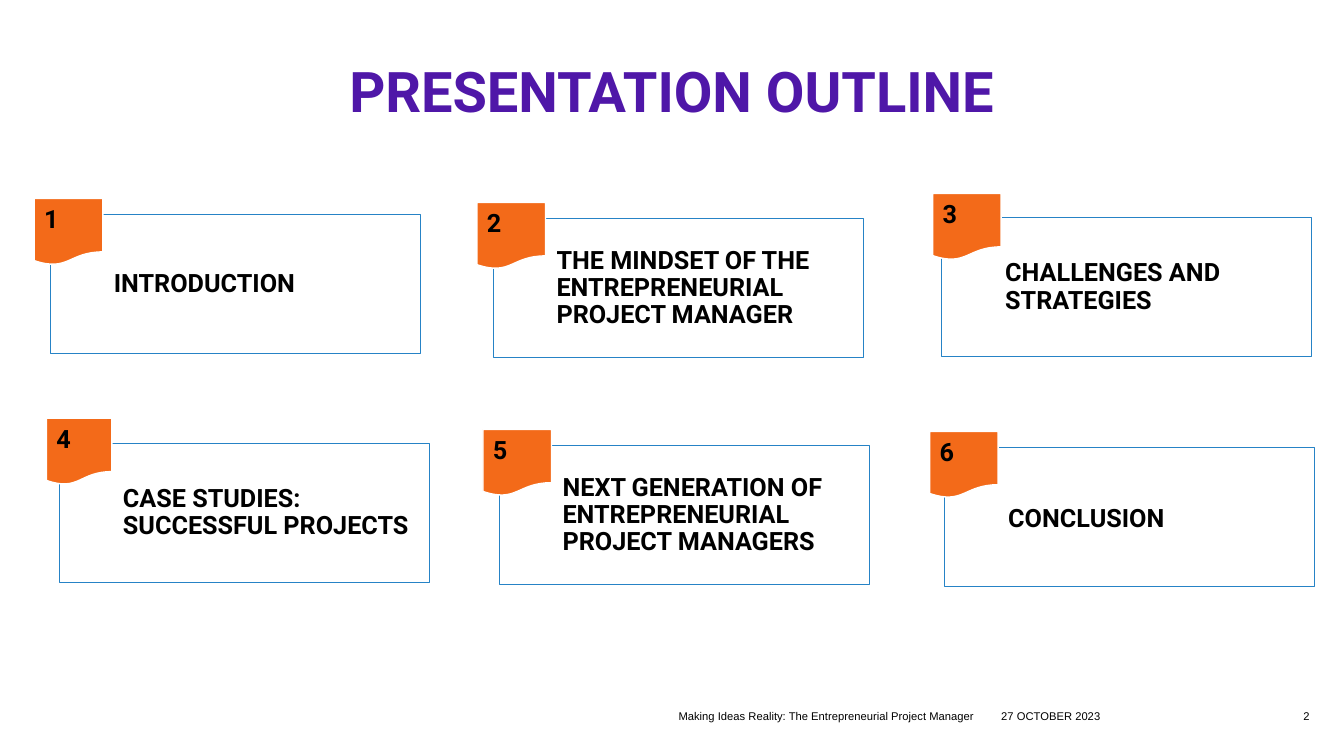
from dataclasses import dataclass
from typing import Any

import pptx
import pptx.dml.color
import pptx.enum.shapes
import pptx.enum.text
import pptx.oxml
import pptx.oxml.ns
import pptx.util
from pptx.util import Inches

ALIGN = pptx.enum.text.PP_ALIGN
ANCHOR = pptx.enum.text.MSO_ANCHOR
SHAPE = pptx.enum.shapes.MSO_SHAPE


# Colours, fonts and type sizes
@dataclass(frozen=True)
class Theme:
    heading: str = "4F17A8"
    ink: str = "000000"
    paper: str = "FFFFFF"
    outline: str = "2683C6"
    flag: str = "F36A19"
    display_font: str = "Roboto"
    footer_font: str = "Arial"
    title_size: int = 40
    topic_size: int = 18
    footer_size: int = 8


THEME = Theme()
CARD_WIDTH, CARD_HEIGHT = 3.67, 1.38
FLAG_HEIGHT = 0.66


@dataclass(frozen=True)
class Topic:
    number: int
    label: str
    card_at: tuple[float, float]
    flag_at: tuple[float, float]
    flag_width: float = 0.68
    align: Any = ALIGN.LEFT
    line_spacing: float = 0.9


@dataclass(frozen=True)
class FooterItem:
    text: str
    left: float
    width: float
    align: Any = ALIGN.LEFT


TOPICS = [
    Topic(1, "INTRODUCTION", (0.5, 2.13), (0.34, 1.97)),
    Topic(2, "THE MINDSET OF THE ENTREPRENEURIAL PROJECT MANAGER",
          (4.89, 2.17), (4.73, 2.01)),
    Topic(3, "CHALLENGES AND STRATEGIES", (9.34, 2.16), (9.25, 1.92)),
    Topic(4, "CASE STUDIES: SUCCESSFUL PROJECTS",
          (0.59, 4.4), (0.46, 4.15), flag_width=0.65),
    Topic(5, "NEXT GENERATION OF ENTREPRENEURIAL PROJECT MANAGERS",
          (4.95, 4.42), (4.79, 4.26)),
    Topic(6, "CONCLUSION", (9.37, 4.44), (9.22, 4.28),
          align=ALIGN.JUSTIFY, line_spacing=1.0),
]

FOOTER = [
    FooterItem("Making Ideas Reality: The Entrepreneurial Project Manager", 6.73, 3.06),
    FooterItem("27 OCTOBER 2023", 9.93, 1.99),
    FooterItem("2", 12.54, 0.45, ALIGN.RIGHT),
]


def rgb(value: str) -> pptx.dml.color.RGBColor:
    return pptx.dml.color.RGBColor.from_string(value)


def apply_format(target: Any, values: dict[str, Any]) -> None:
    for attribute, value in values.items():
        setattr(target, attribute, value)


def write(holder: Any, text: str, size: int, font: str, color: str, bold: bool,
          insets: tuple[float, float, float, float], anchor: Any,
          align: Any = ALIGN.LEFT, line_spacing: float = 1.0) -> None:
    """Fill a shape with one formatted paragraph; insets run left, top, right, bottom."""
    frame = holder.text_frame
    frame.text = text
    sides = ("margin_left", "margin_top", "margin_right", "margin_bottom")
    apply_format(frame, {
        "word_wrap": True,
        "auto_size": pptx.enum.text.MSO_AUTO_SIZE.NONE,
        "vertical_anchor": anchor,
        **{side: Inches(inset) for side, inset in zip(sides, insets)},
    })
    paragraph = frame.paragraphs[0]
    apply_format(paragraph, {"alignment": align, "line_spacing": line_spacing})
    run_font = paragraph.runs[0].font
    apply_format(run_font, {"name": font, "size": pptx.util.Pt(size), "bold": bold})
    run_font.color.rgb = rgb(color)


def paint(shape: Any, fill: str, line: str, line_width: float) -> None:
    shape.shadow.inherit = False
    shape.fill.solid()
    shape.fill.fore_color.rgb = rgb(fill)
    shape.line.color.rgb = rgb(line)
    shape.line.width = pptx.util.Pt(line_width)


def set_opacity(shape: Any, percent: int) -> None:
    color = shape.fill._xPr.find(pptx.oxml.ns.qn("a:solidFill"))[0]
    alpha = pptx.oxml.parse_xml(
        f'<a:alpha {pptx.oxml.ns.nsdecls("a")} val="{percent * 1000}"/>')
    color.append(alpha)


def draw_topic(slide: Any, topic: Topic) -> None:
    group = slide.shapes.add_group_shape()

    # Outlined card with the topic
    left, top = topic.card_at
    card = group.shapes.add_shape(SHAPE.RECTANGLE, Inches(left), Inches(top),
                                  Inches(CARD_WIDTH), Inches(CARD_HEIGHT))
    paint(card, THEME.paper, THEME.outline, 0.5)
    set_opacity(card, 40)
    write(card, topic.label, THEME.topic_size, THEME.display_font, THEME.ink, True,
          (0.63, 0.06, 0.06, 0.06), ANCHOR.MIDDLE, topic.align, topic.line_spacing)

    # Numbered flag over its corner
    left, top = topic.flag_at
    flag = group.shapes.add_shape(SHAPE.FLOWCHART_DOCUMENT, Inches(left), Inches(top),
                                  Inches(topic.flag_width), Inches(FLAG_HEIGHT))
    paint(flag, THEME.flag, THEME.paper, 1)
    write(flag, str(topic.number), THEME.topic_size, THEME.display_font, THEME.ink, True,
          (0.1, 0.05, 0.1, 0.05), ANCHOR.TOP)


def draw_footer_item(slide: Any, item: FooterItem) -> None:
    box = slide.shapes.add_textbox(Inches(item.left), Inches(6.95),
                                   Inches(item.width), Inches(0.22))
    write(box, item.text, THEME.footer_size, THEME.footer_font, THEME.ink, False,
          (0, 0, 0, 0), ANCHOR.BOTTOM, item.align)


def main() -> None:
    deck = pptx.Presentation()
    apply_format(deck, {"slide_width": Inches(13.33), "slide_height": Inches(7.5)})
    slide = deck.slides.add_slide(deck.slide_layouts[5])

    # Title
    title = slide.shapes.title
    apply_format(title, {"left": Inches(0.34), "top": Inches(0.73),
                         "width": Inches(12.64), "height": Inches(0.41)})
    write(title, "PRESENTATION OUTLINE", THEME.title_size, THEME.display_font,
          THEME.heading, True, (0, 0, 0, 0), ANCHOR.MIDDLE, ALIGN.CENTER, 0.9)

    # Topics and footer
    for topic in TOPICS:
        draw_topic(slide, topic)
    for item in FOOTER:
        draw_footer_item(slide, item)

    deck.save("out.pptx")


if __name__ == "__main__":
    main()
